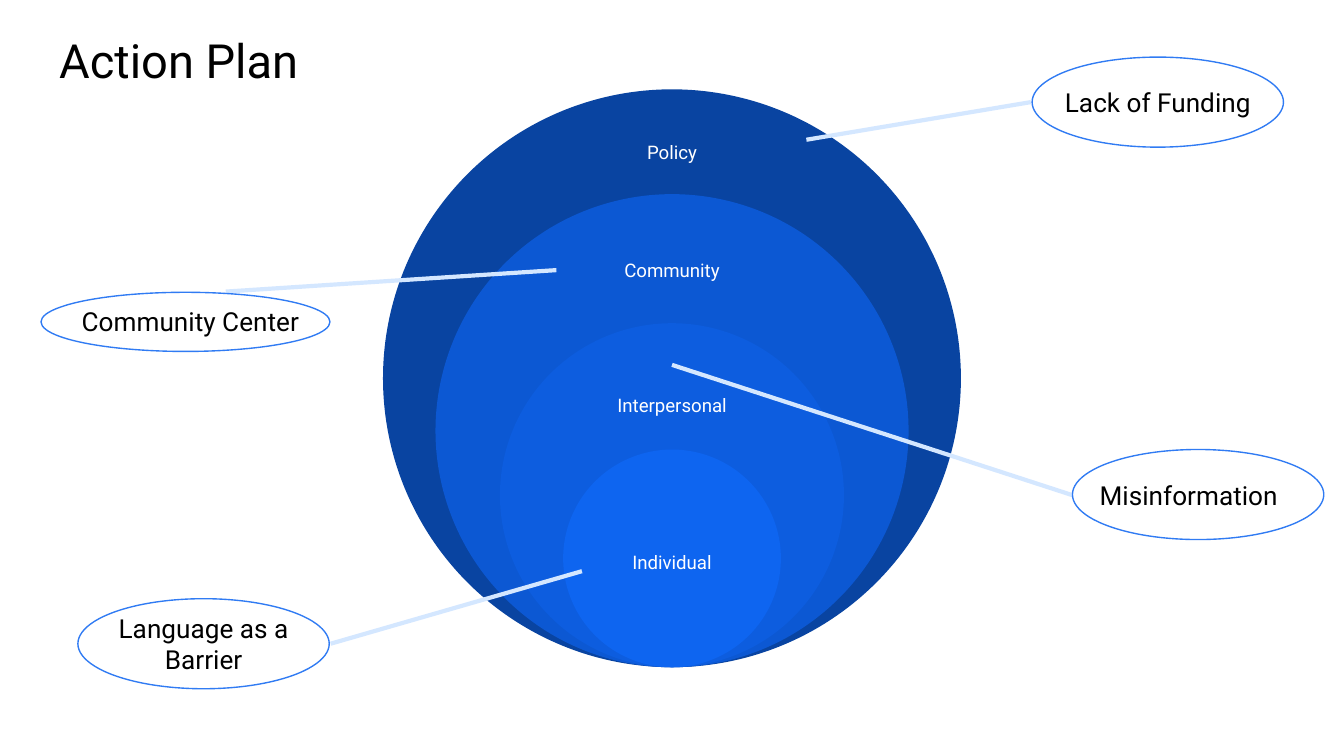
import pptx
import pptx.util
import pptx.dml.color
import pptx.enum.shapes
import pptx.enum.text
import pptx.oxml.ns
import lxml.etree

PX = 4572  # 200 px to the inch
OVAL = pptx.enum.shapes.MSO_SHAPE.OVAL
STRAIGHT = pptx.enum.shapes.MSO_CONNECTOR.STRAIGHT
ALIGN = pptx.enum.text.PP_ALIGN
ANCHOR = pptx.enum.text.MSO_ANCHOR
FIT = pptx.enum.text.MSO_AUTO_SIZE
TOP, LEFT, RIGHT = 0, 1, 3


def color(hex_value):
    return pptx.dml.color.RGBColor.from_string(hex_value)


def write(shape, text, size=14, ink="000000", align=ALIGN.CENTER, anchor=ANCHOR.TOP, fit=FIT.NONE):
    frame = shape.text_frame
    frame.word_wrap = True
    frame.auto_size = fit
    frame.vertical_anchor = anchor
    frame.margin_left = frame.margin_right = 20 * PX
    frame.margin_top = frame.margin_bottom = 20 * PX
    paragraph = frame.paragraphs[0]
    paragraph.alignment = align
    run = paragraph.add_run()
    run.text = text
    run.font.name = "Roboto"
    run.font.size = pptx.util.Pt(size)
    run.font.color.rgb = color(ink)


deck = pptx.Presentation()
deck.slide_width, deck.slide_height = 2000 * PX, 1125 * PX
slide = deck.slides.add_slide(deck.slide_layouts[5])

# Nested levels: circles share a centre line and a lowest point
center_x, base_y = 1000, 993
levels = [  # label, diameter, fill, label top, width, height
    ("Policy", 860, "0944A1", 151, 422, 150),
    ("Community", 704, "0C58D3", 340, 346, 124),
    ("Interpersonal", 512, "0D5DDF", 544, 324, 116),
    ("Individual", 324, "0E65F0", 766, 270, 142),
]
for label, diameter, fill, top, width, height in levels:
    level = slide.shapes.add_group_shape()
    circle = level.shapes.add_shape(OVAL, (center_x - diameter // 2) * PX, (base_y - diameter) * PX,
                                    diameter * PX, diameter * PX)
    circle.shadow.inherit = False
    circle.fill.solid()
    circle.fill.fore_color.rgb = color(fill)
    circle.line.fill.background()
    caption = level.shapes.add_textbox((center_x - width // 2) * PX, top * PX, width * PX, height * PX)
    write(caption, label, size=10, ink="FFFFFF", anchor=ANCHOR.MIDDLE)

# Barriers: text, its box, alignment, oval, pointer tip, side the pointer joins
barriers = [
    ("Language as a Barrier", (114, 891, 378, 134), ALIGN.CENTER, (116, 891, 374, 134), (866, 850), RIGHT),
    ("Misinformation", (1596, 693, 346, 88), ALIGN.CENTER, (1596, 669, 374, 134), (1000, 543), LEFT),
    ("Community Center", (102, 434, 468, 88), ALIGN.LEFT, (61, 435, 430, 88), (828, 402), TOP),
    ("Lack of Funding", (1534, 108, 378, 88), ALIGN.CENTER, (1536, 85, 374, 134), (1200, 208), LEFT),
]
for text, box, align, oval, tip, side in barriers:
    barrier = slide.shapes.add_textbox(*[n * PX for n in box])
    write(barrier, text, align=align, fit=FIT.SHAPE_TO_FIT_TEXT)

    tip_x, tip_y = [n * PX for n in tip]
    pointer = slide.shapes.add_connector(STRAIGHT, tip_x, tip_y, tip_x, tip_y)
    pointer.end_connect(barrier, side)
    pointer.line.color.rgb = color("D4E7FF")
    pointer.line.width = pptx.util.Pt(2.25)
    lxml.etree.SubElement(pointer.element.spPr, pptx.oxml.ns.qn("a:effectLst"))

    outline = slide.shapes.add_shape(OVAL, *[n * PX for n in oval])
    outline.shadow.inherit = False
    outline.fill.background()
    outline.line.color.rgb = color("307BF3")
    outline.line.width = pptx.util.Pt(0.75)

# Title
title = slide.shapes.title
title.left, title.top, title.width, title.height = [n * PX for n in (68, 27, 1864, 126)]
write(title, "Action Plan", size=25.2, align=ALIGN.LEFT)

deck.save("out.pptx")
